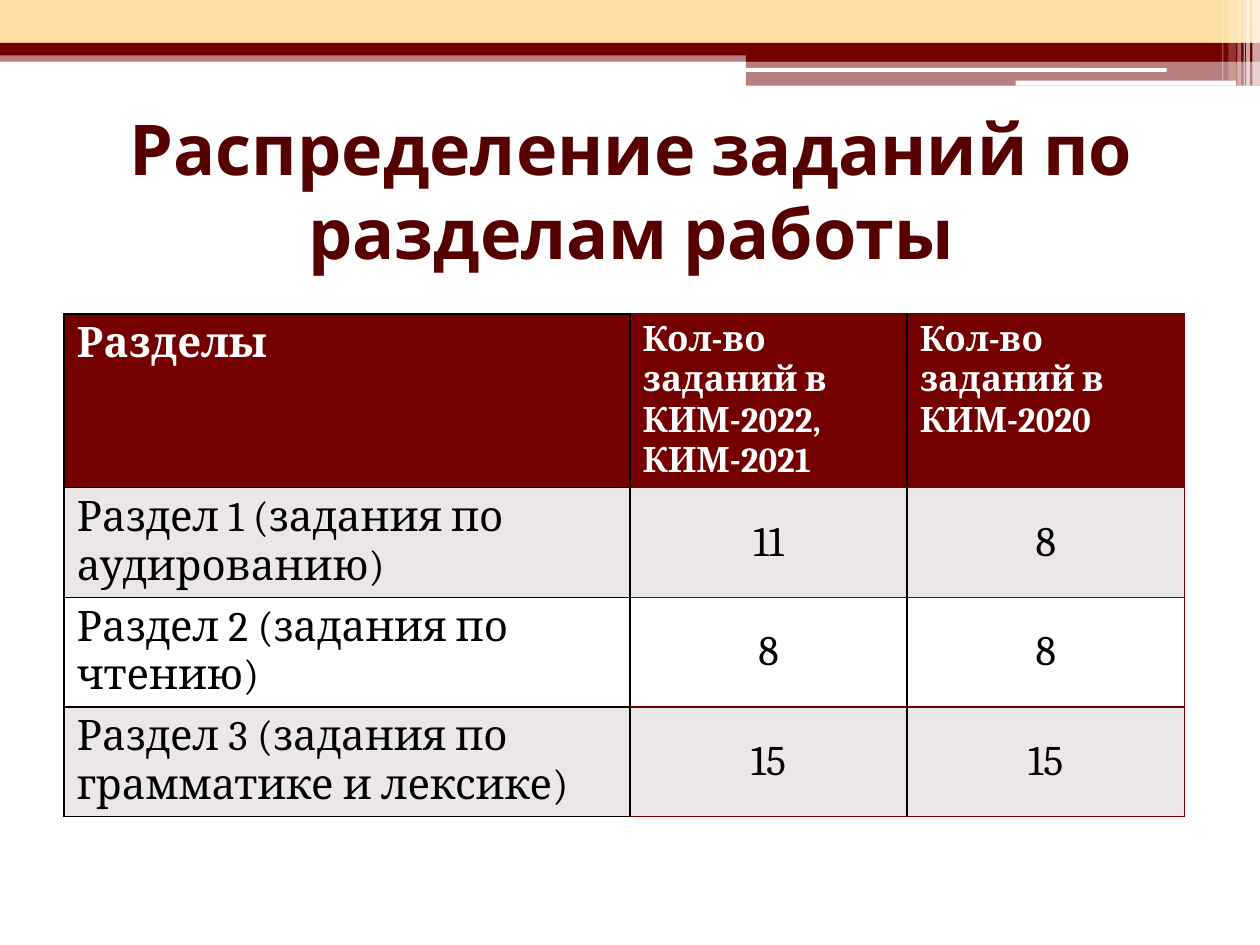
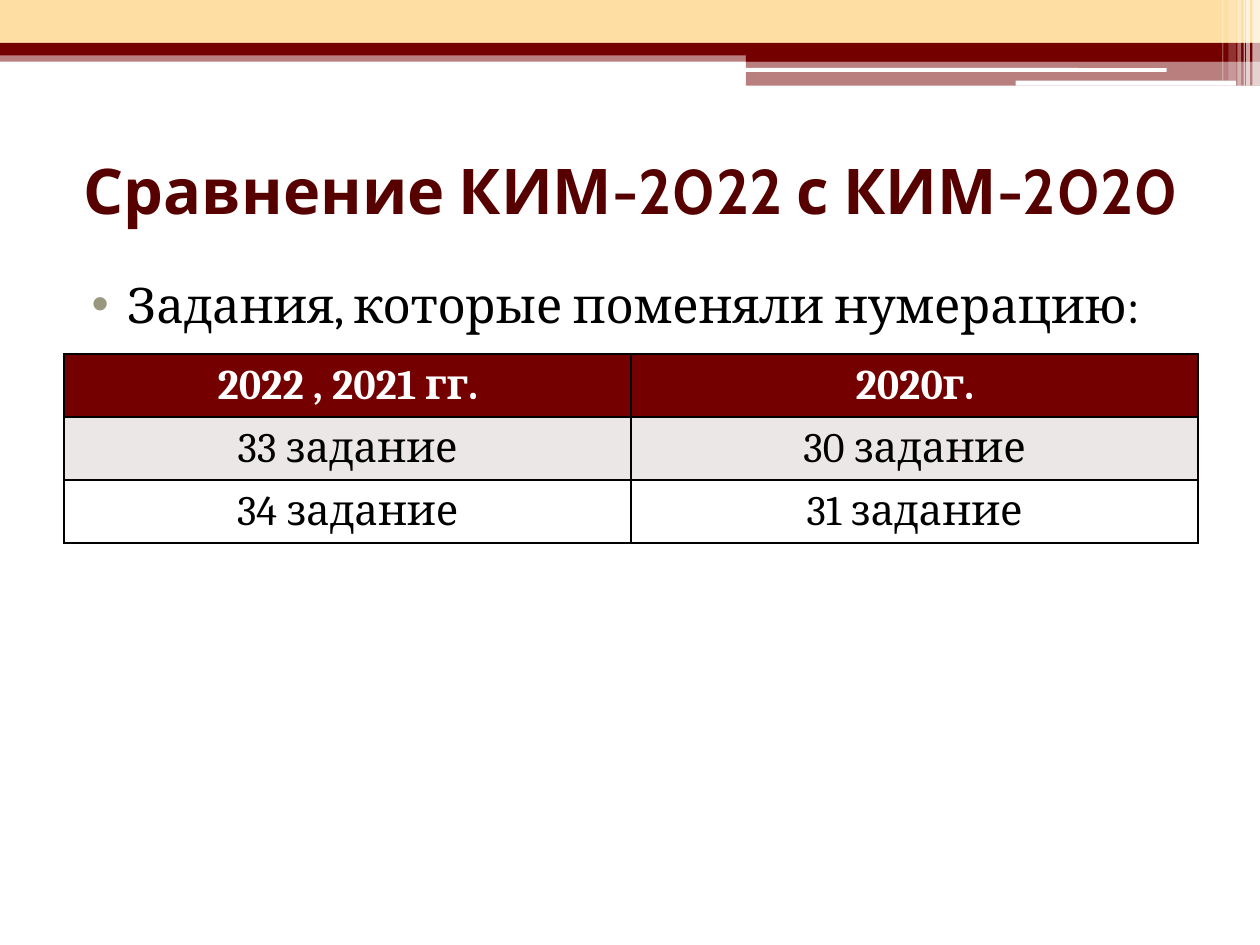
from lxml.etree import SubElement
from pptx import Presentation
from pptx.dml.color import RGBColor
from pptx.enum.shapes import MSO_SHAPE
from pptx.enum.text import MSO_ANCHOR, PP_ALIGN
from pptx.oxml import parse_xml
from pptx.oxml.ns import nsdecls, qn
from pptx.util import Inches, Pt

MAROON, CREAM, WHITE, BLACK = "740000", "FFDEA4", "FFFFFF", "000000"
TITLE_COLOR, STRIPE, BULLET = "570000", "EBE7E7", "99987F"
TITLE_FONT, BODY_FONT = "Cabin", "Cambria"
LEFT, CONTENT_WIDTH = 0.51, 9

BANDS = [
    (0, 0.4, 10, 0.09, MAROON, 50),
    (0, 0, 10, 0.34, CREAM, 100),
    (0, 0.34, 10, 0.1, MAROON, 100),
    (5.92, 0.39, 4.08, 0.1, MAROON, 100),
    (5.92, 0.48, 4.08, 0.2, MAROON, 50),
]
ROUNDED_LINES = [
    (5.91, 0.54, 3.35, 0.03, WHITE, 100),
    (8.06, 0.64, 1.75, 0.04, WHITE, 100),
]
EDGE_STRIPES = [
    (9.94, 0, 0.06, 0.68, WHITE, 65),
    (9.89, 0, 0.03, 0.68, WHITE, 65),
    (9.87, 0, 0.01, 0.68, WHITE, 60),
    (9.82, 0, 0.03, 0.68, WHITE, 40),
    (9.75, 0, 0.06, 0.64, WHITE, 20),
    (9.7, 0, 0.01, 0.64, WHITE, 30),
]

SLIDES = [
    {
        "title": "Распределение заданий по разделам работы",
        "title_size": 40,
        "table": {
            "top": 2.49,
            "columns": [4.49, 2.2, 2.2],
            "heights": [1.37, 0.87, 0.87, 0.87],
            "header_size": 20,
            "labels_first": True,
            "rows": [
                ("Разделы", "Кол-во\nзаданий в КИМ-2022, КИМ-2021", "Кол-во заданий в КИМ-2020"),
                ("Раздел 1 (задания по аудированию)", "11", "8"),
                ("Раздел 2 (задания по чтению)", "8", "8"),
                ("Раздел 3 (задания по грамматике и лексике)", "15", "15"),
            ],
        },
    },
    {
        "title": "Сравнение КИМ-2022 с КИМ-2020",
        "title_size": 36,
        "bullet": "Задания, которые поменяли нумерацию:",
        "table": {
            "top": 2.81,
            "columns": [4.5, 4.5],
            "heights": [0.48, 0.48, 0.48],
            "header_size": 24,
            "labels_first": False,
            "rows": [
                ("2022 , 2021 гг.", "2020г."),
                ("33 задание", "30 задание"),
                ("34 задание", "31 задание"),
            ],
        },
    },
]


def rgb(color):
    return RGBColor.from_string(color)


def place(shape, left, top, width, height):
    shape.left, shape.top = Inches(left), Inches(top)
    shape.width, shape.height = Inches(width), Inches(height)


def write_text(frame, text, size=24, color=BLACK, bold=False, font=BODY_FONT, align=PP_ALIGN.LEFT):
    frame.word_wrap = True
    frame.text = text
    for paragraph in frame.paragraphs:
        paragraph.alignment = align
        for run in paragraph.runs:
            run.font.name = font
            run.font.size = Pt(size)
            run.font.bold = bold
            run.font.color.rgb = rgb(color)


def add_band(slide, layout, kind, left, top, width, height, color, opacity):
    shape = slide.shapes.add_shape(kind, Inches(left), Inches(top), Inches(width), Inches(height))
    shape.shadow.inherit = False
    shape.fill.solid()
    shape.fill.fore_color.rgb = rgb(color)
    shape.line.fill.background()
    if opacity < 100:
        fill_color = shape.element.spPr.find(qn("a:solidFill"))[0]
        SubElement(fill_color, qn("a:alpha"), val=str(opacity * 1000))
    layout.shapes.element.append(shape.element)


def decorate_layout(slide, layout):
    for placeholder in list(layout.placeholders)[1:]:
        layout.shapes.element.remove(placeholder.element)
    for kind, bands in (
        (MSO_SHAPE.RECTANGLE, BANDS),
        (MSO_SHAPE.ROUNDED_RECTANGLE, ROUNDED_LINES),
        (MSO_SHAPE.RECTANGLE, EDGE_STRIPES),
    ):
        for band in bands:
            add_band(slide, layout, kind, *band)


def add_title(slide, text, size):
    title = slide.shapes.title
    place(title, LEFT, 0.92, CONTENT_WIDTH, 1.17)
    title.text_frame.vertical_anchor = MSO_ANCHOR.MIDDLE
    write_text(title.text_frame, text, size=size, color=TITLE_COLOR, bold=True,
               font=TITLE_FONT, align=PP_ALIGN.CENTER)


def add_bullet(slide, text):
    box = slide.shapes.add_textbox(Inches(LEFT), Inches(2.13), Inches(CONTENT_WIDTH), Inches(4.73))
    write_text(box.text_frame, text, size=28, align=PP_ALIGN.JUSTIFY)
    paragraph = box.text_frame.paragraphs[0]
    paragraph.space_before = Pt(3)
    properties = paragraph._p.get_or_add_pPr()
    properties.set("marL", str(Inches(0.4)))
    properties.set("indent", str(Inches(-0.28)))
    bullet_color = SubElement(properties, qn("a:buClr"))
    SubElement(bullet_color, qn("a:srgbClr"), val=BULLET)
    SubElement(properties, qn("a:buFont"), typeface="Arial")
    SubElement(properties, qn("a:buChar"), char="•")


def set_borders(cell, **colors):
    properties = cell._tc.get_or_add_tcPr()
    for position, side in enumerate("LRTB"):
        properties.insert(position, parse_xml(
            f'<a:ln{side} {nsdecls("a")} w="{Pt(1)}"><a:solidFill>'
            f'<a:srgbClr val="{colors.get(side, BLACK)}"/></a:solidFill></a:ln{side}>'))


def add_table(slide, top, columns, heights, header_size, labels_first, rows):
    frame = slide.shapes.add_table(len(rows), len(columns), Inches(LEFT), Inches(top),
                                   Inches(sum(columns)), Inches(sum(heights)))
    table = frame.table
    for column, width in zip(table.columns, columns):
        column.width = Inches(width)
    for row_index, texts in enumerate(rows):
        table.rows[row_index].height = Inches(heights[row_index])
        header = row_index == 0
        fill = MAROON if header else (WHITE, STRIPE)[row_index % 2]
        for column_index, text in enumerate(texts):
            cell = table.cell(row_index, column_index)
            label = labels_first and column_index == 0
            centered = not labels_first or not (header or label)
            cell.vertical_anchor = MSO_ANCHOR.MIDDLE if centered else MSO_ANCHOR.TOP
            cell.fill.solid()
            cell.fill.fore_color.rgb = rgb(fill)
            write_text(cell.text_frame, text,
                       size=header_size if header and not label else 24,
                       color=WHITE if header else BLACK, bold=header,
                       align=PP_ALIGN.CENTER if centered else PP_ALIGN.LEFT)
            if labels_first and not label:
                last = column_index == len(columns) - 1
                set_borders(cell, T=MAROON, B=MAROON, R=MAROON if last else BLACK)
            else:
                set_borders(cell)


def main():
    presentation = Presentation()
    presentation.slide_width, presentation.slide_height = Inches(10), Inches(7.5)
    layout = presentation.slide_layouts[5]
    for index, content in enumerate(SLIDES):
        slide = presentation.slides.add_slide(layout)
        if index == 0:
            decorate_layout(slide, layout)
        add_title(slide, content["title"], content["title_size"])
        if "bullet" in content:
            add_bullet(slide, content["bullet"])
        add_table(slide, **content["table"])
    presentation.save("out.pptx")


if __name__ == "__main__":
    main()
